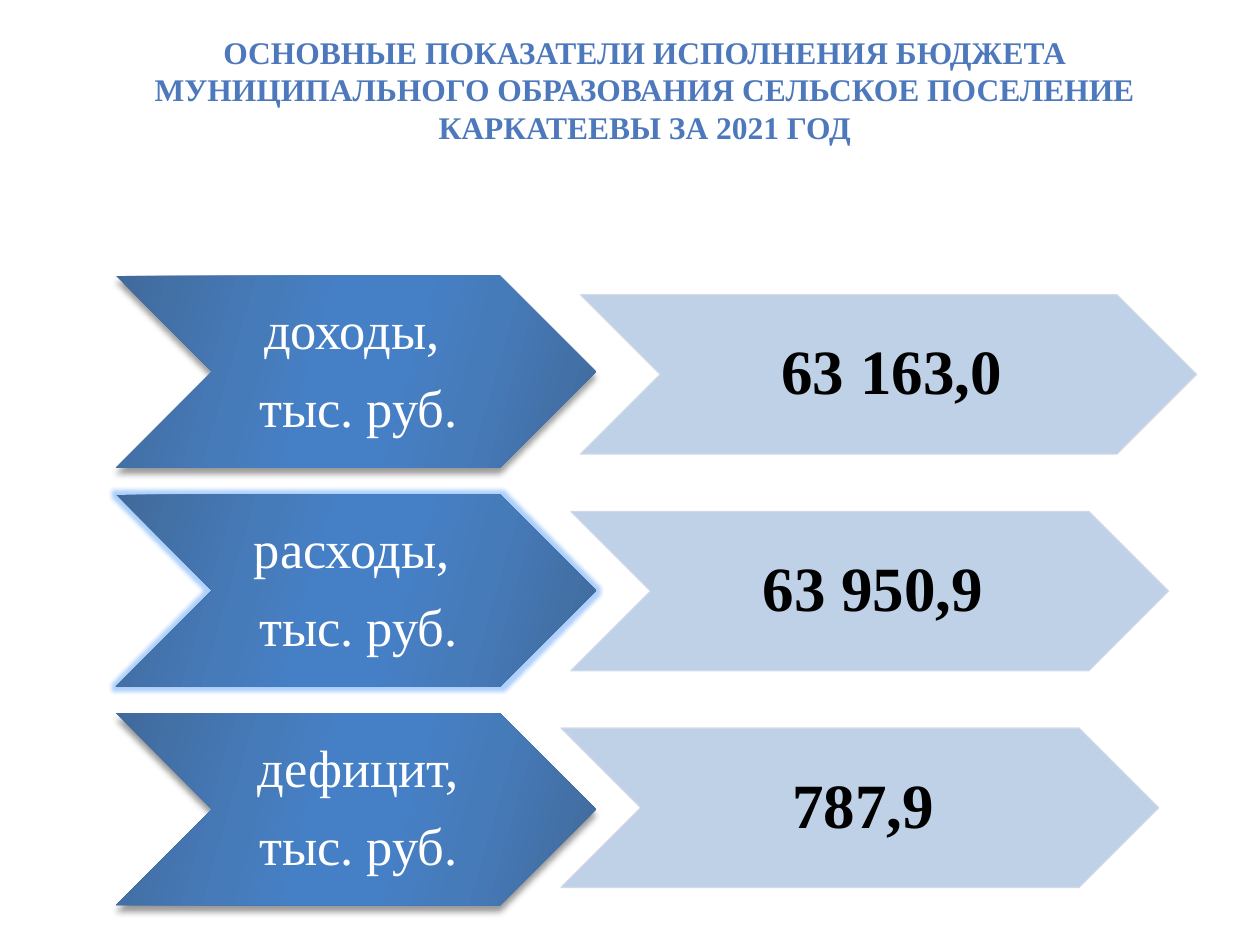
import pptx
import pptx.dml.color
import pptx.enum.shapes
import pptx.enum.text
import pptx.oxml
import pptx.oxml.ns
import pptx.util

Pt = pptx.util.Pt
RGBColor = pptx.dml.color.RGBColor
qn = pptx.oxml.ns.qn

TITLE_BLUE = RGBColor(0x4D, 0x79, 0xBC)
WHITE = RGBColor(0xFF, 0xFF, 0xFF)
BLACK = RGBColor(0x00, 0x00, 0x00)
PALE_BLUE = RGBColor(0xB9, 0xCD, 0xE5)
PALE_EDGE = RGBColor(0xD0, 0xD8, 0xE8)
EDGE_BLUE = RGBColor(0x41, 0x6A, 0x9B)
MIDDLE_BLUE = RGBColor(0x46, 0x7B, 0xBA)
CENTRE_BLUE = RGBColor(0x45, 0x80, 0xC7)
GLOW_BLUE = RGBColor(0x4A, 0x96, 0xF5)

GRADIENT = [(0, EDGE_BLUE), (30, MIDDLE_BLUE), (45, CENTRE_BLUE),
            (55, CENTRE_BLUE), (73, MIDDLE_BLUE), (100, EDGE_BLUE)]
NAMESPACE = pptx.oxml.ns.nsdecls("a")
STOPS = "".join(f'<a:gs pos="{position * 1000}"><a:srgbClr val="{color}"/></a:gs>'
                for position, color in GRADIENT)
GRADIENT_XML = (f'<a:gradFill {NAMESPACE} rotWithShape="1"><a:gsLst>{STOPS}</a:gsLst>'
                f'<a:lin ang="{16 * 60000}" scaled="0"/></a:gradFill>')
SHADOW_XML = (f'<a:effectLst {NAMESPACE}><a:outerShdw blurRad="{Pt(4)}" dist="{Pt(3.4)}" '
              f'dir="{90 * 60000}" rotWithShape="0"><a:srgbClr val="{BLACK}">'
              '<a:alpha val="40000"/></a:srgbClr></a:outerShdw></a:effectLst>')
GLOW_XML = (f'<a:effectLst {NAMESPACE}><a:glow rad="{Pt(5)}"><a:srgbClr val="{GLOW_BLUE}">'
            '<a:alpha val="45000"/></a:srgbClr></a:glow></a:effectLst>')


def write_text(shape, lines, size, color, bold=False, line_spacing=None, space_after=0,
               anchor=pptx.enum.text.MSO_ANCHOR.MIDDLE, margins=(7.2, 3.6, 7.2, 3.6)):
    frame = shape.text_frame
    frame.word_wrap = True
    frame.vertical_anchor = anchor
    (frame.margin_left, frame.margin_top,
     frame.margin_right, frame.margin_bottom) = map(Pt, margins)
    frame.text = "\n".join(lines)
    for paragraph in frame.paragraphs:
        paragraph.alignment = pptx.enum.text.PP_ALIGN.CENTER
        paragraph.line_spacing = line_spacing
        paragraph.space_after = Pt(space_after)
        for run in paragraph.runs:
            run.font.name = "Times New Roman"
            run.font.size = Pt(size)
            run.font.bold = bold
            run.font.color.rgb = color


def add_chevron(left, top, width, height):
    return slide.shapes.add_shape(pptx.enum.shapes.MSO_SHAPE.CHEVRON,
                                  Pt(left), Pt(top), Pt(width), Pt(height))


presentation = pptx.Presentation()
presentation.slide_width = Pt(720)
presentation.slide_height = Pt(540)
slide = presentation.slides.add_slide(presentation.slide_layouts[5])

title = slide.shapes.title
title.left, title.top, title.width, title.height = Pt(48), Pt(15), Pt(641), Pt(73)
write_text(title, ["ОСНОВНЫЕ ПОКАЗАТЕЛИ ИСПОЛНЕНИЯ БЮДЖЕТА МУНИЦИПАЛЬНОГО ОБРАЗОВАНИЯ "
                   "СЕЛЬСКОЕ ПОСЕЛЕНИЕ КАРКАТЕЕВЫ ЗА 2021 ГОД"],
           size=18, color=TITLE_BLUE, bold=True, anchor=pptx.enum.text.MSO_ANCHOR.TOP)
title.text_frame.auto_size = pptx.enum.text.MSO_AUTO_SIZE.SHAPE_TO_FIT_TEXT

# Label, value, width of the value chevron, effect of the label chevron
indicators = [
    ("доходы, ", "63 163,0", 352, SHADOW_XML),
    ("расходы, ", "63 950,9", 341.5, GLOW_XML),
    ("дефицит,", "787,9", 341.5, SHADOW_XML),
]
for row, (label, value, value_width, effect) in enumerate(indicators):
    label_chevron = add_chevron(66.2, 157.6 + 125 * row, 274.3, 109.7)
    label_chevron.line.fill.background()
    properties = label_chevron.element.spPr
    properties.find(qn("a:prstGeom")).addnext(pptx.oxml.parse_xml(GRADIENT_XML))
    properties.append(pptx.oxml.parse_xml(effect))
    write_text(label_chevron, [label, "тыс. руб."], size=30, color=WHITE,
               line_spacing=0.9, space_after=12, margins=(3, 1.5, 0, 1.5))

    value_chevron = add_chevron(331.8 - 5.6 * row, 168.5 + 123.8 * row, value_width, 91)
    value_chevron.shadow.inherit = False
    value_chevron.fill.solid()
    value_chevron.fill.fore_color.rgb = PALE_BLUE
    value_chevron.line.color.rgb = PALE_EDGE
    value_chevron.line.width = Pt(0.75)
    for color in value_chevron.element.spPr.iter(qn("a:srgbClr")):
        color.append(pptx.oxml.parse_xml(f'<a:alpha {NAMESPACE} val="90000"/>'))
    write_text(value_chevron, [value], size=36, color=BLACK, bold=True,
               line_spacing=0.9, margins=(3.6, 1.8, 0, 1.8))

presentation.save("out.pptx")
